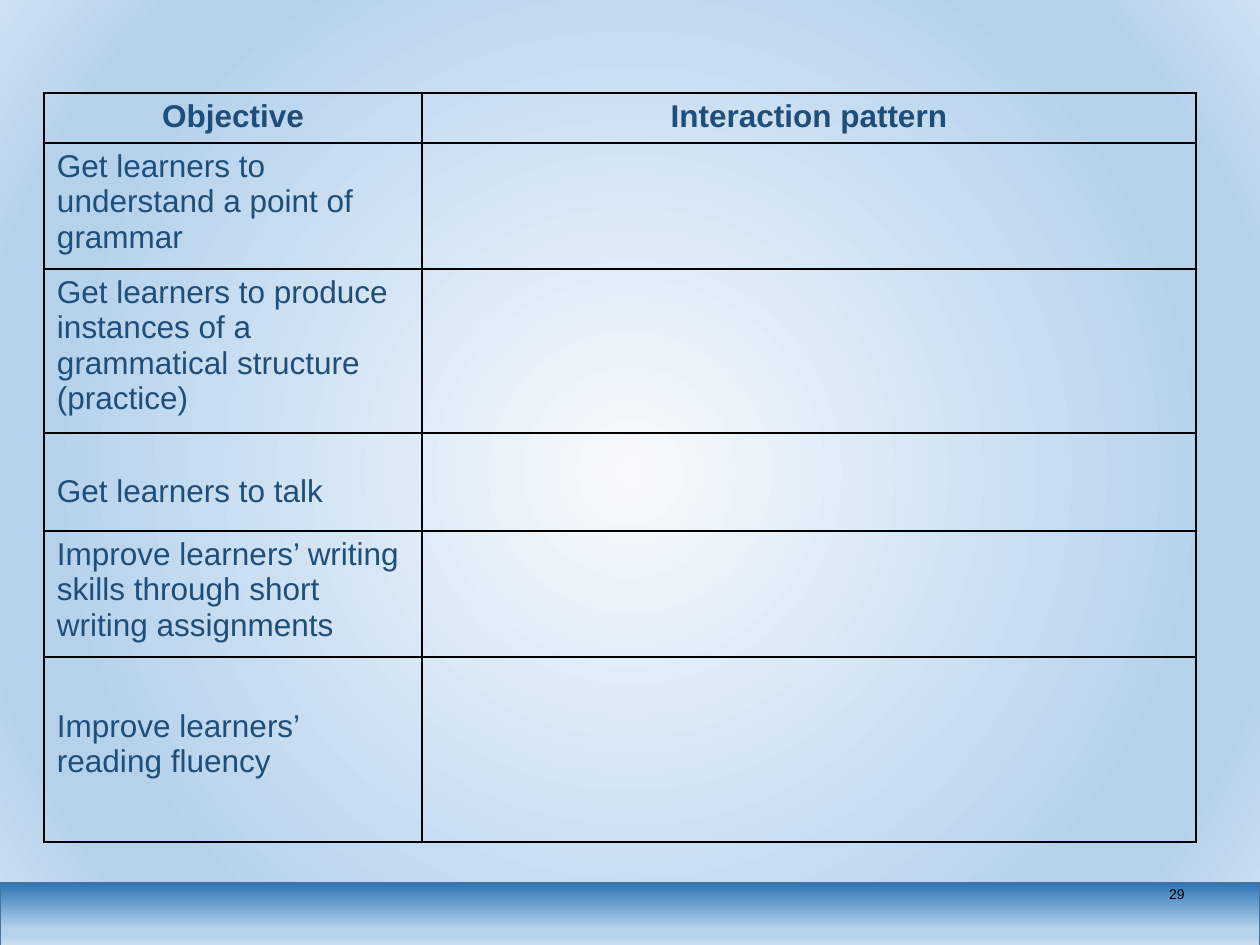
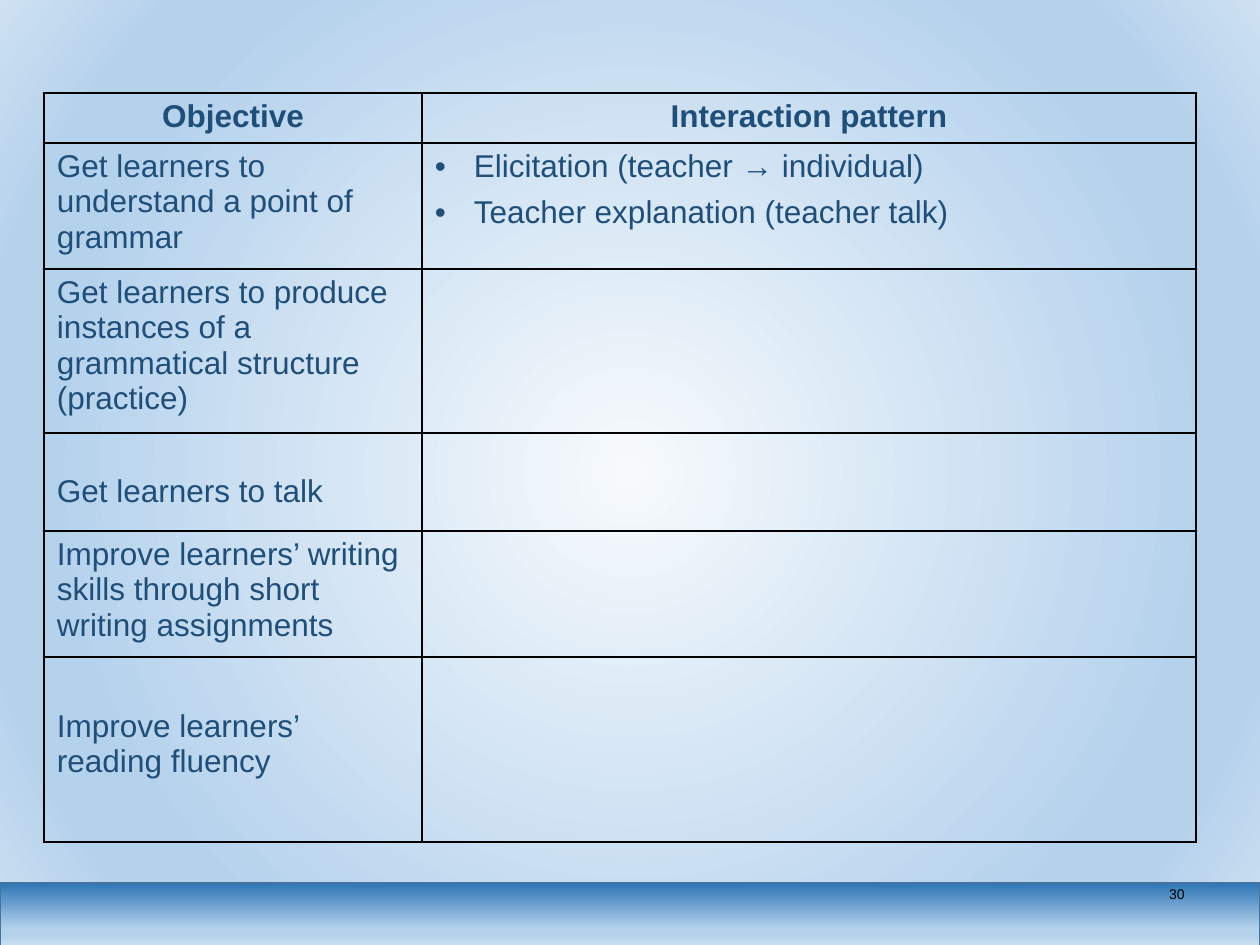
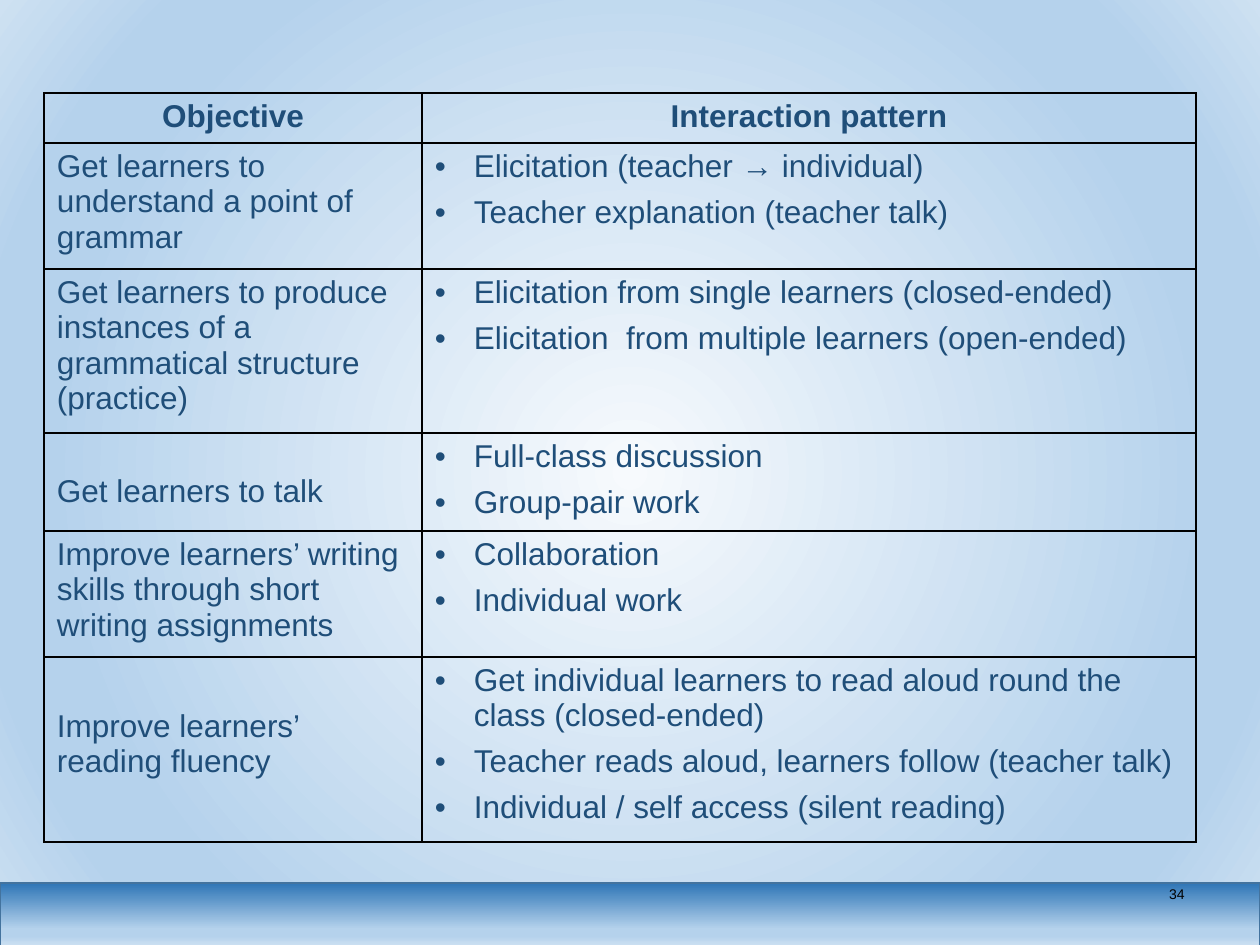
import pptx
import pptx.util
import pptx.dml.color
import pptx.enum.shapes
import pptx.enum.text
import pptx.oxml
import pptx.oxml.ns

RGBColor = pptx.dml.color.RGBColor
ALIGN = pptx.enum.text.PP_ALIGN
ANCHOR = pptx.enum.text.MSO_ANCHOR

NAVY = RGBColor(0x1F, 0x4E, 0x79)
BLACK = RGBColor(0, 0, 0)
BAND_LINE = RGBColor(0x43, 0x73, 0x9E)
BAND_BLUE = RGBColor(0x2E, 0x75, 0xB6)
CENTRE_WHITE = RGBColor(0xF7, 0xFA, 0xFD)
SKY = RGBColor(0xB5, 0xD2, 0xEC)
PALE = RGBColor(0xCE, 0xE1, 0xF2)

FONT = "Arial"
EMU_PER_PX = 914400 / 126
WIDTH, HEIGHT = 1260, 945
COLUMN_WIDTHS = [378, 774]
ROW_HEIGHTS = [50, 126, 164, 98, 126, 185]
MARGIN_X, MARGIN_Y = 13, 6
BULLET_INDENT = 39

BACKGROUND_STOPS = [(0, CENTRE_WHITE), (74, SKY), (83, SKY), (100, PALE)]
BAND_STOPS = [(0, BAND_BLUE), (72, SKY), (83, SKY), (100, PALE)]
CIRCLE = '<a:path path="circle"><a:fillToRect l="50000" t="50000" r="50000" b="50000"/></a:path>'
DOWNWARD = '<a:lin ang="5400000" scaled="0"/>'

HEADERS = ["Objective", "Interaction pattern"]
OBJECTIVES = [
    ("Get learners to understand a point of grammar", 0),
    ("Get learners to produce instances of a grammatical structure (practice)", 0),
    ("Get learners to talk", 35),
    ("Improve learners’ writing skills through short writing assignments", 0),
    ("Improve learners’ reading fluency", 46),
]
PATTERNS = [
    ["Elicitation (teacher → individual)", "Teacher explanation (teacher talk)"],
    ["Elicitation from single learners (closed-ended)",
     "Elicitation  from multiple learners (open-ended)"],
    ["Full-class discussion", "Group-pair work"],
    ["Collaboration", "Individual work"],
    ["Get individual learners to read aloud round the class (closed-ended)",
     "Teacher reads aloud, learners follow (teacher talk)",
     "Individual / self access (silent reading)"],
]
SLIDES = [("29", 0), ("30", 1), ("34", len(PATTERNS))]


def px(length):
    return pptx.util.Emu(round(length * EMU_PER_PX))


def drawing_xml(tag, attributes="", content=""):
    namespace = pptx.oxml.ns.nsdecls("a")
    return pptx.oxml.parse_xml(f"<a:{tag} {namespace} {attributes}>{content}</a:{tag}>")


def set_gradient(fill, element, stops, shading):
    fill.gradient()
    stop_xml = "".join(
        f'<a:gs pos="{position * 1000}"><a:srgbClr val="{color}"/></a:gs>'
        for position, color in stops)
    gradient = drawing_xml("gradFill", 'rotWithShape="1"', f"<a:gsLst>{stop_xml}</a:gsLst>{shading}")
    current = element.find(".//" + pptx.oxml.ns.qn("a:gradFill"))
    current.getparent().replace(current, gradient)


def write_text(frame, lines, size=18, color=NAVY, bold=False, align=ALIGN.LEFT,
               before=0, after=6, bullet=False):
    for index, line in enumerate(lines):
        paragraph = frame.paragraphs[0] if index == 0 else frame.add_paragraph()
        paragraph.alignment = align
        paragraph.space_before = pptx.util.Pt(before)
        paragraph.space_after = pptx.util.Pt(after)
        run = paragraph.add_run()
        run.text = line
        run.font.name = FONT
        run.font.size = pptx.util.Pt(size)
        run.font.bold = bold
        run.font.color.rgb = color
        if bullet:
            properties = paragraph._p.get_or_add_pPr()
            properties.set("marL", str(px(BULLET_INDENT)))
            properties.set("indent", str(-px(BULLET_INDENT)))
            properties.append(drawing_xml("buFont", f'typeface="{FONT}"'))
            properties.append(drawing_xml("buChar", 'char="•"'))


def format_cell(cell, extra_top=0):
    cell.margin_left = cell.margin_right = px(MARGIN_X)
    cell.margin_top = px(MARGIN_Y + extra_top)
    cell.margin_bottom = px(MARGIN_Y)
    cell.vertical_anchor = ANCHOR.TOP
    properties = cell._tc.get_or_add_tcPr()
    for side in ("lnL", "lnR", "lnT", "lnB"):
        properties.append(drawing_xml(
            side, f'w="{pptx.util.Pt(1)}"',
            f'<a:solidFill><a:srgbClr val="{BLACK}"/></a:solidFill>'))
    cell.fill.background()


def add_objectives_table(slide, answered_rows):
    shape = slide.shapes.add_table(
        len(ROW_HEIGHTS), len(COLUMN_WIDTHS), px(44), px(93),
        px(sum(COLUMN_WIDTHS)), px(sum(ROW_HEIGHTS)))
    table = shape.table
    table.first_row = table.horz_banding = False
    for column, width in zip(table.columns, COLUMN_WIDTHS):
        column.width = px(width)
    for row, height in zip(table.rows, ROW_HEIGHTS):
        row.height = px(height)
    for column, header in enumerate(HEADERS):
        cell = table.cell(0, column)
        format_cell(cell)
        write_text(cell.text_frame, [header], bold=True, align=ALIGN.CENTER, before=6)
    for row, (objective, extra_top) in enumerate(OBJECTIVES, start=1):
        objective_cell, pattern_cell = table.cell(row, 0), table.cell(row, 1)
        format_cell(objective_cell, extra_top)
        format_cell(pattern_cell)
        write_text(objective_cell.text_frame, [objective])
        if row <= answered_rows:
            write_text(pattern_cell.text_frame, PATTERNS[row - 1], bullet=True)


def add_page_number(slide, number):
    frame = slide.shapes.add_textbox(px(903), px(861), px(294), px(65)).text_frame
    frame.word_wrap = True
    frame.vertical_anchor = ANCHOR.MIDDLE
    write_text(frame, [number], size=8, color=BLACK, align=ALIGN.RIGHT, after=0)


def style_master(master, slide):
    set_gradient(master.background.fill, master.element, BACKGROUND_STOPS, CIRCLE)
    band = slide.shapes.add_shape(
        pptx.enum.shapes.MSO_SHAPE.RECTANGLE, px(0), px(883), px(WIDTH), px(64))
    band.shadow.inherit = False
    set_gradient(band.fill, band.element, BAND_STOPS, DOWNWARD)
    band.line.color.rgb = BAND_LINE
    band.line.width = pptx.util.Pt(1)
    master.shapes.element.insert(2, band.element)


def main():
    presentation = pptx.Presentation()
    presentation.slide_width = px(WIDTH)
    presentation.slide_height = px(HEIGHT)
    blank_layout = presentation.slide_layouts[6]
    slides = [presentation.slides.add_slide(blank_layout) for _ in SLIDES]
    style_master(presentation.slide_master, slides[0])
    for slide, (number, answered_rows) in zip(slides, SLIDES):
        add_objectives_table(slide, answered_rows)
        add_page_number(slide, number)
    presentation.save("out.pptx")


if __name__ == "__main__":
    main()
